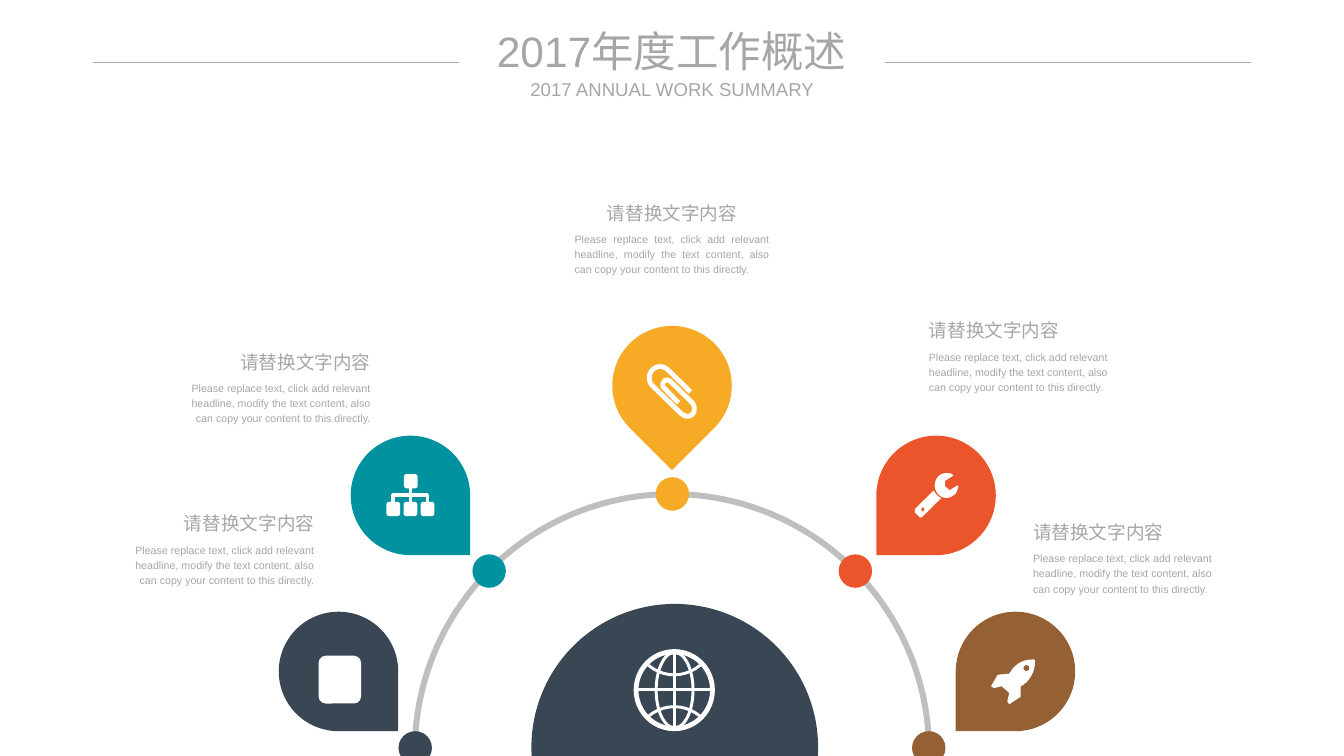
"""Build the annual work summary slide: five pins around a half ring."""
from dataclasses import dataclass

from lxml import etree
from pptx import Presentation
from pptx.dml.color import RGBColor
from pptx.enum.shapes import MSO_CONNECTOR, MSO_SHAPE
from pptx.enum.text import MSO_ANCHOR, MSO_AUTO_SIZE, PP_ALIGN
from pptx.oxml.ns import qn
from pptx.util import Pt

OVAL, TEARDROP = MSO_SHAPE.OVAL, MSO_SHAPE.TEAR
ROUNDED, CHORD, ARC = MSO_SHAPE.ROUNDED_RECTANGLE, MSO_SHAPE.CHORD, MSO_SHAPE.ARC
STRAIGHT = MSO_CONNECTOR.STRAIGHT
TOP, MIDDLE = MSO_ANCHOR.TOP, MSO_ANCHOR.MIDDLE
NO_FIT = MSO_AUTO_SIZE.NONE
LEFT, RIGHT, CENTER, JUSTIFY = PP_ALIGN.LEFT, PP_ALIGN.RIGHT, PP_ALIGN.CENTER, PP_ALIGN.JUSTIFY

WHITE = RGBColor(0xFF, 0xFF, 0xFF)
GREY = RGBColor(0xA6, 0xA6, 0xA6)
SILVER = RGBColor(0xBF, 0xBF, 0xBF)
NAVY = RGBColor(0x39, 0x47, 0x54)
TEAL = RGBColor(0x00, 0x93, 0x9F)
AMBER = RGBColor(0xF6, 0xAA, 0x26)
ORANGE = RGBColor(0xEA, 0x55, 0x2B)
BROWN = RGBColor(0x95, 0x61, 0x34)

FONT = "Arial"
HEADING = "请替换文字内容"
BODY = ("Please replace text, click add relevant headline, modify the text content, "
        "also can copy your content to this directly.")
PIN, DOT = 90, 25.2
CURVE_STEPS = 10


@dataclass
class Pin:
    color: RGBColor
    x: float
    y: float
    rotation: float
    dot_x: float
    dot_y: float


@dataclass
class Caption:
    x: float
    y: float
    width: float
    heading_align: PP_ALIGN
    body_align: PP_ALIGN


PINS = [
    Pin(NAVY, 210, 460.8, 90, 300.2, 550.8),
    Pin(TEAL, 264.2, 328.2, 90, 355.9, 417.6),
    Pin(AMBER, 461.3, 245.5, 135, 493.9, 359.5),
    Pin(ORANGE, 660.2, 328.2, 180, 631.8, 417.6),
    Pin(BROWN, 720, 460.8, 180, 687.1, 550.8),
]
CAPTIONS = [
    Caption(97.9, 385.9, 139, RIGHT, RIGHT),
    Caption(138.2, 264.2, 141.1, RIGHT, RIGHT),
    Caption(432.9, 151.9, 146.9, CENTER, JUSTIFY),
    Caption(699.8, 240.5, 146.9, LEFT, LEFT),
    Caption(778.3, 392.4, 141.1, LEFT, LEFT),
]

PAPERCLIP = [
    (520.2, 295.2), (503.6, 279),
    (501.8, 277.2, 499.7, 276.1, 497.5, 276.1), (493.2, 276.1, 489.2, 279.4, 489.2, 284.4),
    (489.2, 288, 490.3, 289.4, 492.1, 291.2), (513, 311.4),
    (514.8, 312.8, 516.2, 313.6, 517.7, 313.6), (520.9, 313.6, 523.1, 311.4, 523.1, 308.2),
    (523.1, 306, 522.4, 304.2, 520.9, 302.8), (505.4, 287.6),
    (504, 286.6, 503.3, 286.2, 502.6, 286.2), (500.8, 286.2, 499.3, 288, 499.3, 290.2),
    (499.3, 291, 499.7, 291.6, 500.8, 292.7), (511.2, 303.5),
]
WRENCH_HANDLE = [
    (695.5, 388.8), (694.1, 390.2, 693.4, 390.2, 691.9, 388.8), (689.8, 386.6),
    (689, 385.9, 689, 384, 689.8, 383), (703.4, 369.4),
    (704.9, 372.2, 707, 374.4, 709.2, 375.1),
]
WRENCH_HEAD = [
    (721.4, 368.6), (720.7, 372.2, 717.1, 375.1, 712.8, 375.1),
    (707.8, 375.1, 704.2, 370.1, 704.2, 365.8), (704.2, 360.7, 707.8, 356.4, 712.8, 356.4),
    (715, 356.4, 716.4, 356.4, 717.8, 357.8), (717.8, 358.6), (712.1, 362.2), (712.1, 366.5),
    (715.7, 369.4), (716.4, 368.6, 720.7, 365.8, 721.4, 365.8),
    (722.2, 365.8, 722.2, 367.2, 721.4, 368.6),
]
ROCKET = [
    (773.3, 514.1), (771.8, 514.8, 771.1, 516.2, 769, 517), (769, 524.9), (760.3, 530.6),
    (758.9, 528.5), (760.3, 522), (754.6, 517), (748.8, 518.4), (746.6, 517), (751.7, 508.3),
    (760.3, 507.6), (761, 506.2, 762.5, 504.7, 763.2, 503.3),
    (768.2, 498.2, 772.6, 496.8, 779, 496.8), (779.8, 497.5),
    (779.8, 504, 778.3, 508.3, 773.3, 514.1),
]


def paint(sp, fill: RGBColor | None, line: RGBColor | None, weight: float) -> None:
    sp.shadow.inherit = False
    if fill is None:
        sp.fill.background()
    else:
        sp.fill.solid()
        sp.fill.fore_color.rgb = fill
    if line is None:
        sp.line.fill.background()
    else:
        sp.line.color.rgb = line
        sp.line.width = Pt(weight)


def add_preset(s, kind, x: float, y: float, w: float, h: float, fill: RGBColor | None = None,
               line: RGBColor | None = None, weight: float = 1, rotation: float = 0,
               adjust: tuple = ()) -> None:
    sp = s.shapes.add_shape(kind, Pt(x), Pt(y), Pt(w), Pt(h))
    sp.rotation = rotation
    for i, value in enumerate(adjust):
        sp.adjustments[i] = value
    paint(sp, fill, line, weight)


def add_outline(s, segments: list, fill: RGBColor | None = None,
                line: RGBColor | None = None, weight: float = 1) -> None:
    points = [segments[0]]
    for seg in segments[1:]:
        if len(seg) == 2:
            points.append(seg)
            continue
        nodes = (points[-1], seg[:2], seg[2:4], seg[4:])
        for step in range(1, CURVE_STEPS + 1):
            t = step / CURVE_STEPS
            weights = ((1 - t) ** 3, 3 * t * (1 - t) ** 2, 3 * t * t * (1 - t), t ** 3)
            points.append(tuple(sum(k * n[axis] for k, n in zip(weights, nodes)) for axis in (0, 1)))
    builder = s.shapes.build_freeform(Pt(points[0][0]), Pt(points[0][1]))
    builder.add_line_segments([(Pt(x), Pt(y)) for x, y in points[1:]], close=fill is not None)
    paint(builder.convert_to_shape(), fill, line, weight)


def add_rule(s, x1: float, y1: float, x2: float, y2: float, color: RGBColor, weight: float) -> None:
    cxn = s.shapes.add_connector(STRAIGHT, Pt(x1), Pt(y1), Pt(x2), Pt(y2))
    cxn.line.color.rgb = color
    cxn.line.width = Pt(weight)
    etree.SubElement(cxn._element.spPr, qn("a:effectLst"))


def write_text(sp, text: str, *, box: tuple, size: float, align: PP_ALIGN,
               anchor: MSO_ANCHOR = TOP, spacing: float = 1.0) -> None:
    sp.left, sp.top, sp.width, sp.height = map(Pt, box)
    tf = sp.text_frame
    tf.auto_size = NO_FIT
    tf.word_wrap = True
    tf.vertical_anchor = anchor
    tf.margin_left = tf.margin_right = tf.margin_top = tf.margin_bottom = 0
    p = tf.paragraphs[0]
    p.alignment = align
    p.line_spacing = spacing
    r = p.add_run()
    r.text = text
    r.font.name = FONT
    r.font.size = Pt(size)
    r.font.color.rgb = GREY


def add_text(s, text: str, **fmt) -> None:
    write_text(s.shapes.add_textbox(0, 0, 0, 0), text, **fmt)


def draw_globe(s) -> None:
    add_preset(s, OVAL, 479.2, 490.8, 57.6, 58.2, line=WHITE, weight=3.6)
    add_preset(s, OVAL, 494.3, 491.5, 27.8, 56.8, line=WHITE, weight=2.2)
    add_rule(s, 479.2, 519.6, 536.8, 519.6, WHITE, 2.2)
    add_rule(s, 508, 490.8, 508, 549, WHITE, 2.2)
    for end, bend in ((501.1, 510.8), (539.6, 530)):
        add_outline(s, [(488.5, end), (500, bend, 516, bend, 527.5, end)], line=WHITE, weight=2.2)


def draw_org_chart(s) -> None:
    boxes = [(304.3, 357.1)] + [(291.1 + 12.9 * i, 378) for i in range(3)]
    for x, y in boxes:
        add_preset(s, ROUNDED, x, y, 10.4, 10.8, fill=WHITE, adjust=(0.2,))
    add_rule(s, 309.4, 367, 309.4, 379, WHITE, 2.7)
    add_outline(s, [(296.2, 379), (296.2, 373), (321.9, 373), (321.9, 379)], line=WHITE, weight=2.7)


def main() -> None:
    prs = Presentation()
    prs.slide_width, prs.slide_height = Pt(1012.5), Pt(569.5)
    s = prs.slides.add_slide(prs.slide_layouts[5])
    write_text(s.shapes.title, "2017年度工作概述", box=(350.6, 18.7, 311, 38.9), size=32,
               align=CENTER, anchor=MIDDLE)
    add_text(s, "2017 ANNUAL WORK SUMMARY", box=(396, 58.3, 221, 17.3), size=14,
             align=CENTER, anchor=MIDDLE)
    for x in (69.8, 666.7):
        add_rule(s, x, 46.8, x + 275.8, 46.8, GREY, 0.5)

    add_preset(s, CHORD, 400.3, 455, 216, 216, fill=NAVY, rotation=105, adjust=(42.35, 155.32))
    draw_globe(s)
    add_preset(s, ARC, 312.5, 372.2, 387.4, 387.4, line=SILVER, weight=4.5, adjust=(107.69, 0))
    for pin in PINS:
        add_preset(s, OVAL, pin.dot_x, pin.dot_y, DOT, DOT, fill=pin.color)
        add_preset(s, TEARDROP, pin.x, pin.y, PIN, PIN, fill=pin.color, rotation=pin.rotation)

    add_preset(s, ROUNDED, 240, 494, 32, 36, fill=WHITE)
    draw_org_chart(s)
    add_outline(s, PAPERCLIP, line=WHITE, weight=3.6)
    for outline in (WRENCH_HANDLE, WRENCH_HEAD, ROCKET):
        add_outline(s, outline, fill=WHITE)
    add_preset(s, OVAL, 694.1, 382.3, 2.2, 2.9, fill=ORANGE)
    add_preset(s, OVAL, 771.1, 501.1, 4.3, 4.3, fill=BROWN)

    for c in CAPTIONS:
        add_text(s, HEADING, box=(c.x, c.y, c.width, 17.3), size=14, align=c.heading_align)
        add_text(s, BODY, box=(c.x, c.y + 21.6, c.width, 34.6), size=8, align=c.body_align,
                 spacing=1.2)
    prs.save("out.pptx")


if __name__ == "__main__":
    main()
